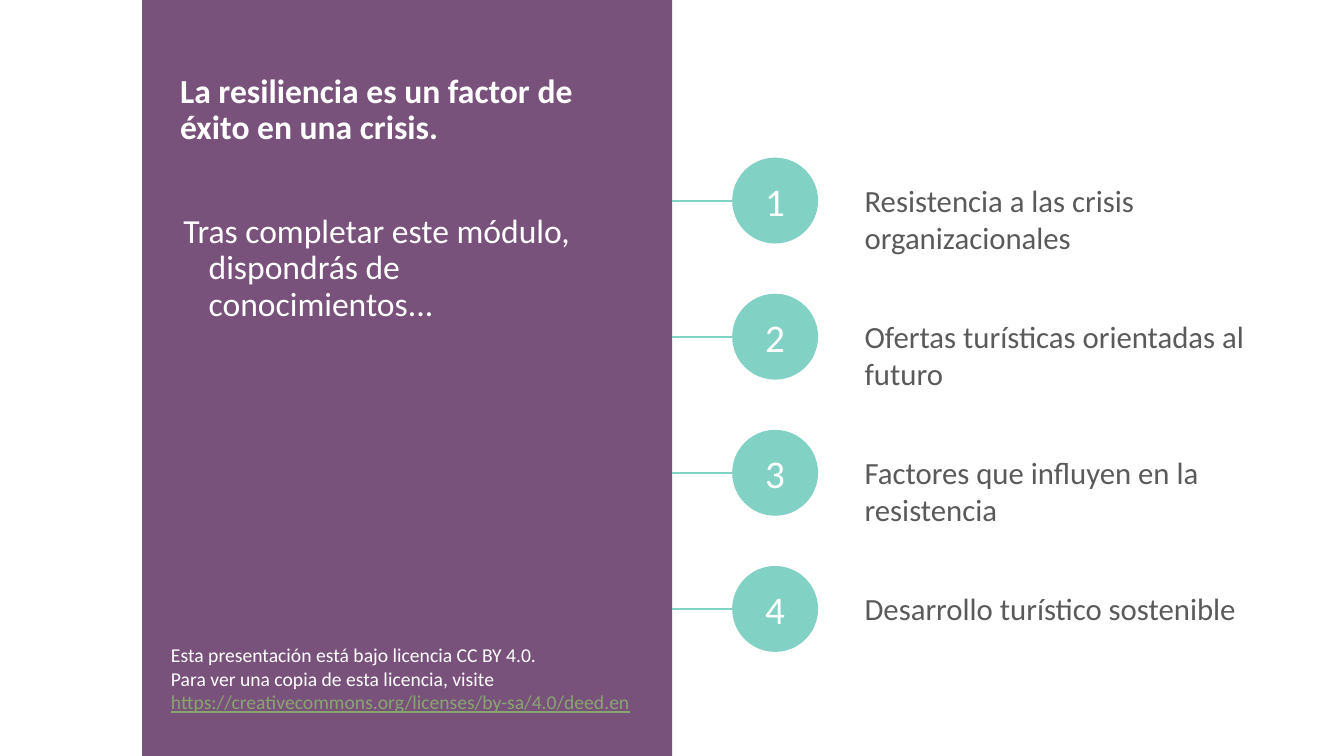
from lxml.etree import SubElement
from pptx import Presentation
from pptx.dml.color import RGBColor
from pptx.enum.shapes import MSO_CONNECTOR, MSO_SHAPE
from pptx.enum.text import MSO_ANCHOR, PP_ALIGN
from pptx.oxml.ns import qn
from pptx.util import Cm, Pt

PURPLE = RGBColor(0x79, 0x52, 0x7B)
TEAL = RGBColor(0x81, 0xD1, 0xC5)
GREY = RGBColor(0x59, 0x5A, 0x59)
GREEN = RGBColor(0x87, 0xA6, 0x6E)
WHITE = RGBColor(0xFF, 0xFF, 0xFF)

deck = Presentation()
deck.slide_width, deck.slide_height = Cm(33.87), Cm(19.05)
page = deck.slides.add_slide(deck.slide_layouts[6])


def set_font(paragraph, size, color, bold=False):
    font = paragraph.font
    font.name, font.size, font.bold = "Calibri", Pt(size), bold
    font.color.rgb = color


def add_text(left, top, width, height, lines, size, color, bold=False):
    box = page.shapes.add_textbox(Cm(left), Cm(top), Cm(width), Cm(height))
    frame = box.text_frame
    frame.word_wrap = True
    frame.text = "\n".join(lines)
    for paragraph in frame.paragraphs:
        set_font(paragraph, size, color, bold)
    return frame.paragraphs


panel = page.shapes.add_shape(MSO_SHAPE.RECTANGLE, Cm(3.58), 0, Cm(13.36), deck.slide_height)
panel.shadow.inherit = False
panel.fill.solid()
panel.fill.fore_color.rgb = PURPLE
panel.line.fill.background()

intro = add_text(4.37, 5.28, 11.61, 12.62,
                 ["Tras completar este módulo, dispondrás de conocimientos..."], 24, WHITE)[0]
intro.line_spacing = 0.9
intro_properties = intro._p.get_or_add_pPr()
intro_properties.set("marL", str(Cm(0.64)))
intro_properties.set("indent", str(Cm(-0.64)))

title = add_text(4.29, 1.75, 11.81, 1.68,
                 ["La resiliencia es un factor de éxito en una crisis."], 24, WHITE, True)[0]
title.line_spacing = 0.9

licence = add_text(4.06, 16.08, 12.93, 2.06,
                   ["Esta presentación está bajo licencia CC BY 4.0.",
                    "Para ver una copia de esta licencia, visite "], 14, WHITE)
address = licence[1].add_run()
address.text = "https://creativecommons.org/licenses/by-sa/4.0/deed.en"
address.font.color.rgb = GREEN
address.font.underline = True

topics = [
    "Resistencia a las crisis organizacionales",
    "Ofertas turísticas orientadas al futuro",
    "Factores que influyen en la resistencia",
    "Desarrollo turístico sostenible",
]
FIRST_TOP, PITCH, DIAMETER = 3.99, 3.43, 2.13
CIRCLE_LEFT, PANEL_RIGHT = 18.47, 16.94

for index, topic in enumerate(topics):
    top = FIRST_TOP + index * PITCH
    middle = Cm(top + DIAMETER / 2)

    stem = page.shapes.add_connector(MSO_CONNECTOR.STRAIGHT, Cm(PANEL_RIGHT), middle,
                                     Cm(CIRCLE_LEFT), middle)
    stem.line.color.rgb = TEAL
    stem.line.width = Pt(1.5)
    SubElement(stem._element.spPr, qn("a:effectLst"))

    circle = page.shapes.add_shape(MSO_SHAPE.OVAL, Cm(CIRCLE_LEFT), Cm(top),
                                   Cm(DIAMETER), Cm(DIAMETER))
    circle.shadow.inherit = False
    circle.fill.solid()
    circle.fill.fore_color.rgb = TEAL
    circle.line.color.rgb = TEAL
    circle.line.width = Pt(1)
    circle.text_frame.text = str(index + 1)
    circle.text_frame.vertical_anchor = MSO_ANCHOR.MIDDLE
    number = circle.text_frame.paragraphs[0]
    number.alignment = PP_ALIGN.CENTER
    set_font(number, 28, WHITE)

    add_text(21.54, top + 0.46, 11.05, 1.19, [topic], 22, GREY)

deck.save("out.pptx")
